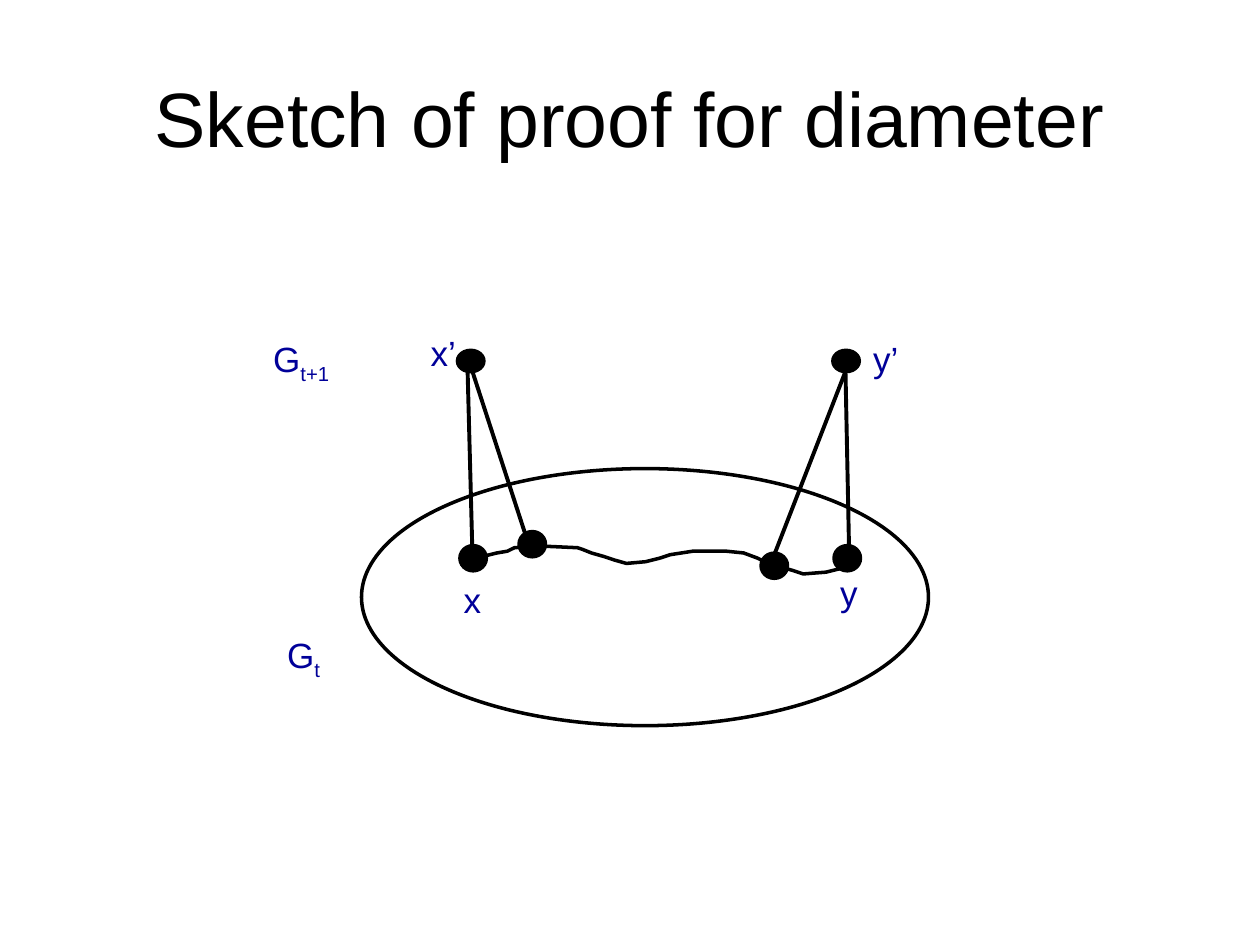
from dataclasses import dataclass

from lxml import etree
from pptx import Presentation
from pptx import util as u
from pptx.dml.color import RGBColor
from pptx.enum import shapes, text
from pptx.oxml.ns import qn
from pptx.shapes.base import BaseShape
from pptx.slide import Slide


@dataclass(frozen=True)
class Theme:
    ink: RGBColor = RGBColor(0, 0, 0)
    label: RGBColor = RGBColor(0, 0, 0x99)
    font: str = "Arial"
    title_size: float = 44
    label_size: float = 20
    outline: float = 2
    edge: float = 2.25


@dataclass(frozen=True)
class Node:
    left: float
    top: float
    height: float = 14.4
    width: float = 15.1


@dataclass(frozen=True)
class Label:
    left: float
    top: float
    width: float
    words: str
    subscript: str = ""


@dataclass(frozen=True)
class Edge:
    start: tuple[float, float]
    end: tuple[float, float]


THEME = Theme()

NODES = [
    Node(262.8, 311.8),         # x
    Node(476.6, 311.8),         # y
    Node(296.6, 303.8),         # neighbour of x
    Node(434.9, 316.1),         # neighbour of y
    Node(261.4, 200.2, 12.2),   # x’
    Node(475.9, 200.2, 12.2),   # y’
]
LABELS = [
    Label(257.8, 326.9, 24.5, "x"),
    Label(239, 185.8, 29.5, "x’"),
    Label(473, 323.3, 24.5, "y"),
    Label(491.8, 189.4, 29.5, "y’"),
    Label(157, 358.6, 33.8, "G", "t"),
    Label(149, 189.4, 49, "G", "t+1"),
]
EDGES = [
    Edge((300.2, 305.3), (270, 212.4)),
    Edge((267.1, 207.4), (270, 318.2)),
    Edge((483.1, 209.5), (485.3, 319.7)),
    Edge((442.8, 316.1), (483.1, 212.4)),
]
WALK = [
    (270.7, 319), (280.1, 316.8), (284.4, 316.1), (290.2, 314.6),
    (294.5, 313.2), (308.2, 312.5), (330.5, 313.2), (332.6, 313.9),
    (338.4, 316.1), (344.9, 317.5), (348.5, 319), (350.6, 320.4),
    (357.8, 321.8), (369.4, 321.1), (377.3, 319), (383, 316.8),
    (396, 315.4), (414.7, 315), (424.8, 316.1), (433.4, 319),
    (439.2, 321.8), (445.7, 324), (452.9, 326.2), (459.4, 327.6),
    (471.6, 326.9), (480.2, 324.7), (483.8, 323.3),
]


def place(shape: BaseShape, left: float, top: float, width: float, height: float) -> None:
    shape.left, shape.top = u.Pt(left), u.Pt(top)
    shape.width, shape.height = u.Pt(width), u.Pt(height)


def add_run(paragraph, words: str, size: float, color: RGBColor, baseline: int = 0) -> None:
    run = paragraph.add_run()
    run.text = words
    run.font.name = THEME.font
    run.font.size = u.Pt(size)
    run.font.color.rgb = color
    if baseline:
        run.font._element.set("baseline", str(baseline))


def draw_outline(shape: BaseShape) -> None:
    shape.shadow.inherit = False
    shape.fill.background()
    shape.line.color.rgb = THEME.ink
    shape.line.width = u.Pt(THEME.outline)


def draw_ellipse(slide: Slide, node: Node, filled: bool = True) -> None:
    shape = slide.shapes.add_shape(
        shapes.MSO_SHAPE.OVAL,
        u.Pt(node.left), u.Pt(node.top), u.Pt(node.width), u.Pt(node.height))
    draw_outline(shape)
    if filled:
        shape.fill.solid()
        shape.fill.fore_color.rgb = THEME.ink


def draw_walk(slide: Slide, points: list[tuple[float, float]]) -> None:
    builder = slide.shapes.build_freeform(*points[0], scale=u.Pt(1))
    builder.add_line_segments(points[1:], close=False)
    draw_outline(builder.convert_to_shape())


def draw_edge(slide: Slide, edge: Edge) -> None:
    connector = slide.shapes.add_connector(
        shapes.MSO_CONNECTOR.STRAIGHT,
        *(u.Pt(value) for value in edge.start + edge.end))
    connector.line.color.rgb = THEME.ink
    connector.line.width = u.Pt(THEME.edge)
    etree.SubElement(connector._element.spPr, qn("a:effectLst"))


def draw_label(slide: Slide, label: Label) -> None:
    box = slide.shapes.add_textbox(
        u.Pt(label.left), u.Pt(label.top), u.Pt(label.width), u.Pt(31.7))
    frame = box.text_frame
    frame.word_wrap = False
    frame.auto_size = text.MSO_AUTO_SIZE.SHAPE_TO_FIT_TEXT
    paragraph = frame.paragraphs[0]
    add_run(paragraph, label.words, THEME.label_size, THEME.label)
    if label.subscript:
        add_run(paragraph, label.subscript, THEME.label_size, THEME.label, -25000)


def main() -> None:
    presentation = Presentation()
    presentation.slide_width, presentation.slide_height = u.Pt(720), u.Pt(540)
    slide = presentation.slides.add_slide(presentation.slide_layouts[5])

    # Title
    title = slide.shapes.title
    place(title, 36, 21.6, 648, 90)
    title.text_frame.vertical_anchor = text.MSO_ANCHOR.MIDDLE
    paragraph = title.text_frame.paragraphs[0]
    paragraph.alignment = text.PP_ALIGN.CENTER
    add_run(paragraph, "Sketch of proof for diameter", THEME.title_size, THEME.ink)

    # Graph at time t and the walk inside it
    draw_ellipse(slide, Node(206.6, 267.8, 146.9, 324), filled=False)
    draw_walk(slide, WALK)

    # Vertices, edges to the new vertices, and names
    for node in NODES:
        draw_ellipse(slide, node)
    for edge in EDGES:
        draw_edge(slide, edge)
    for label in LABELS:
        draw_label(slide, label)

    presentation.save("out.pptx")


if __name__ == "__main__":
    main()
